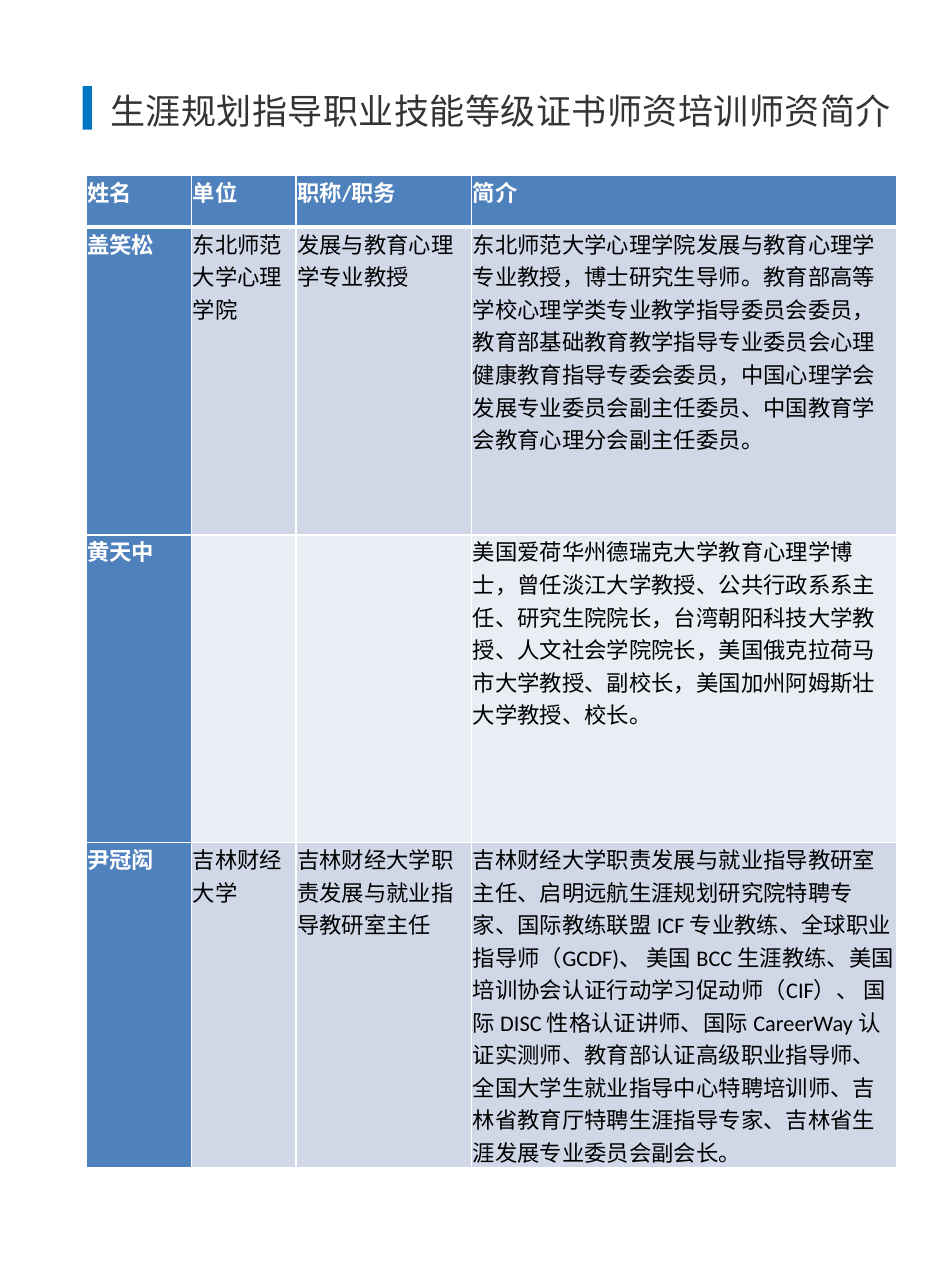
from dataclasses import dataclass

from lxml import etree
from pptx import Presentation
from pptx import util as u
from pptx.dml.color import RGBColor
from pptx.enum import shapes, text
from pptx.oxml.ns import qn


@dataclass(frozen=True)
class Theme:
    header: str = "4F81BD"
    bands: tuple = ("D0D8E8", "E9EDF4")
    border: str = "FFFFFF"
    light: str = "FFFFFF"
    body: str = "000000"
    title: str = "343435"
    accent: str = "0077C0"
    body_size: float = 14
    title_size: float = 22
    latin: str = "Calibri"
    chinese: str = "Noto Sans CJK SC"


THEME = Theme()
TITLE = "生涯规划指导职业技能等级证书师资培训师资简介"
COLUMN_WIDTHS = (0.92, 0.91, 1.53, 3.7)
HEADER_HEIGHT, TEACHER_HEIGHT = 0.45, 2.68
TEACHERS = (
    ("姓名", "单位", "职称/职务", "简介"),
    ("盖笑松", "东北师范大学心理学院", "发展与教育心理学专业教授",
     "东北师范大学心理学院发展与教育心理学专业教授，博士研究生导师。"
     "教育部高等学校心理学类专业教学指导委员会委员，"
     "教育部基础教育教学指导专业委员会心理健康教育指导专委会委员，"
     "中国心理学会发展专业委员会副主任委员、中国教育学会教育心理分会副主任委员。"),
    ("黄天中", "", "",
     "美国爱荷华州德瑞克大学教育心理学博士，曾任淡江大学教授、"
     "公共行政系系主任、研究生院院长，台湾朝阳科技大学教授、人文社会学院院长，"
     "美国俄克拉荷马市大学教授、副校长，美国加州阿姆斯壮大学教授、校长。"),
    ("尹冠闳", "吉林财经大学", "吉林财经大学职责发展与就业指导教研室主任",
     "吉林财经大学职责发展与就业指导教研室主任、"
     "启明远航生涯规划研究院特聘专家、国际教练联盟 ICF 专业教练、"
     "全球职业指导师（GCDF)、 美国 BCC 生涯教练、"
     "美国培训协会认证行动学习促动师（CIF）、 国际 DISC 性格认证讲师、"
     "国际 CareerWay 认证实测师、教育部认证高级职业指导师、"
     "全国大学生就业指导中心特聘培训师、吉林省教育厅特聘生涯指导专家、"
     "吉林省生涯发展专业委员会副会长。"),
)


def set_attributes(target, values):
    for name, value in values.items():
        setattr(target, name, value)


def paint(fill, color):
    fill.solid()
    fill.fore_color.rgb = RGBColor.from_string(color)


def write(frame, wording, size, color, latin, bold=False, spacing=0):
    """Fill a text frame with one run, with letter spacing in points."""
    paragraph = frame.paragraphs[0]
    paragraph._p.get_or_add_pPr().set("hangingPunct", "0")
    run = paragraph.add_run()
    run.text = wording
    set_attributes(run.font, {"size": u.Pt(size), "bold": bold, "name": latin})
    run.font.color.rgb = RGBColor.from_string(color)
    properties = run.font._element
    etree.SubElement(properties, qn("a:ea"), typeface=THEME.chinese)
    if spacing:
        properties.set("spc", str(round(spacing * 100)))


def add_borders(cell, widths):
    """Draw cell borders; widths maps the sides L, R, T, B to points."""
    properties = cell._tc.get_or_add_tcPr()
    for side, width in widths.items():
        line = etree.SubElement(properties, qn(f"a:ln{side}"), w=str(u.Pt(width)))
        fill = etree.SubElement(line, qn("a:solidFill"))
        etree.SubElement(fill, qn("a:srgbClr"), val=THEME.border)


def format_cell(cell, wording, row, column):
    is_heading = row == 0 or column == 0
    set_attributes(cell, {
        "margin_left": u.Inches(0.01), "margin_right": u.Inches(0.01),
        "margin_top": 0, "margin_bottom": 0,
        "vertical_anchor": text.MSO_ANCHOR.TOP,
    })
    add_borders(cell, {"L": 1, "R": 1, "T": 3 if row == 1 else 1,
                       "B": 3 if row == 0 else 1})
    paint(cell.fill, THEME.header if is_heading else THEME.bands[(row - 1) % 2])
    if wording:
        write(cell.text_frame, wording, THEME.body_size,
              THEME.light if is_heading else THEME.body, THEME.latin, is_heading)


def add_teacher_table(slide, left, top):
    heights = [HEADER_HEIGHT] + [TEACHER_HEIGHT] * (len(TEACHERS) - 1)
    table = slide.shapes.add_table(
        len(heights), len(COLUMN_WIDTHS), u.Inches(left), u.Inches(top),
        u.Inches(sum(COLUMN_WIDTHS)), u.Inches(sum(heights))).table
    for column, width in zip(table.columns, COLUMN_WIDTHS):
        column.width = u.Inches(width)
    for row, height in zip(table.rows, heights):
        row.height = u.Inches(height)
    for row, wordings in enumerate(TEACHERS):
        for column, wording in enumerate(wordings):
            format_cell(table.cell(row, column), wording, row, column)


def add_title(slide, *box):
    frame = slide.shapes.add_textbox(*map(u.Inches, box)).text_frame
    set_attributes(frame, {
        "margin_left": 0, "margin_right": 0, "margin_top": 0, "margin_bottom": 0,
        "word_wrap": True, "auto_size": text.MSO_AUTO_SIZE.SHAPE_TO_FIT_TEXT,
    })
    write(frame, TITLE, THEME.title_size, THEME.title, THEME.chinese, spacing=0.35)


def add_accent_bar(slide, *box):
    shape = slide.shapes.add_shape(shapes.MSO_SHAPE.RECTANGLE, *map(u.Inches, box))
    shape.shadow.inherit = False
    paint(shape.fill, THEME.accent)
    shape.line.fill.background()


def main():
    presentation = Presentation()
    set_attributes(presentation, {"slide_width": u.Inches(8.26),
                                  "slide_height": u.Inches(11.22)})
    slide = presentation.slides.add_slide(presentation.slide_layouts[6])
    add_teacher_table(slide, 0.75, 1.53)
    add_title(slide, 0.96, 0.78, 6.93, 0.37)
    add_accent_bar(slide, 0.72, 0.75, 0.08, 0.38)
    presentation.save("out.pptx")


if __name__ == "__main__":
    main()
